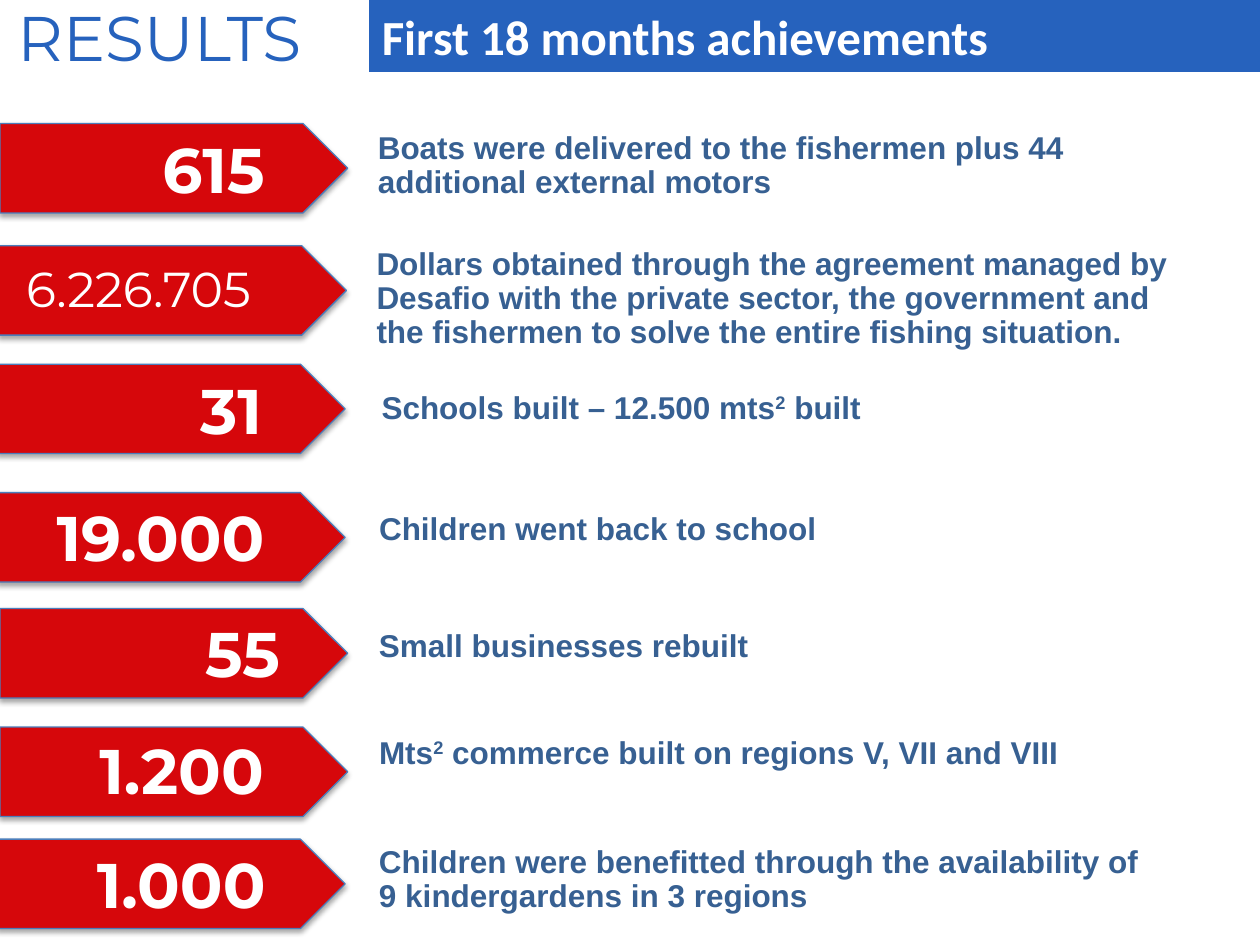
from dataclasses import dataclass

from lxml import etree
from pptx import Presentation
from pptx.dml.color import RGBColor
from pptx.enum.shapes import MSO_SHAPE
from pptx.enum.text import MSO_ANCHOR, MSO_AUTO_SIZE, PP_ALIGN
from pptx.oxml.ns import qn
from pptx.util import Inches, Pt

PENTAGON = MSO_SHAPE.PENTAGON
LEFT, TOP = PP_ALIGN.LEFT, MSO_ANCHOR.TOP
NO_AUTOFIT = MSO_AUTO_SIZE.NONE
TITLE_ONLY = 5

BLUE, NAVY, RED, OUTLINE, WHITE = "2662BD", "376092", "D6070B", "4B7EBC", "FFFFFF"
SLIDE_WIDTH, SLIDE_HEIGHT = 10, 7.5
BAR_LEFT, BAR_HEIGHT = 2.93, 0.57
ARROW_WIDTH, ARROW_HEIGHT = 2.76, 0.71
SUPERSCRIPT = "²"


@dataclass
class Result:
    """One achievement: its arrow, its figure and its description."""
    figure: str
    arrow: tuple
    figure_box: tuple
    description: str
    description_box: tuple
    spacing: float = 0.9
    size: int = 36
    bold: bool = True


RESULTS = [
    Result("615", (0, 0.98), (1.19, 0.99, 1.21),
           "Boats were delivered to the fishermen plus 44 additional external motors",
           (2.9, 1, 6.19, 0.65)),
    Result("6.226.705", (-0.01, 1.95), (0.11, 2, 2.3),
           "Dollars obtained through the agreement managed by Desafio with the private "
           "sector, the government and the fishermen to solve the entire fishing situation.",
           (2.89, 1.92, 6.67, 0.92), size=28, bold=False),
    Result("31", (-0.02, 2.89), (1.49, 2.9, 0.88),
           "Schools built – 12.500 mts² built", (2.93, 3.03, 4.1, 0.4), spacing=1.0),
    Result("19.000", (-0.02, 3.91), (0.35, 3.91, 2.05),
           "Children went back to school", (2.91, 3.99, 3.71, 0.4), spacing=1.0),
    Result("55", (0, 4.83), (1.53, 4.83, 0.88),
           "Small businesses rebuilt", (2.91, 4.92, 3.16, 0.4), spacing=1.0),
    Result("1.200", (0, 5.77), (0.69, 5.76, 1.72),
           "Mts² commerce built on regions V, VII and VIII", (2.91, 5.8, 6.18, 0.38)),
    Result("1.000", (-0.02, 6.66), (0.67, 6.66, 1.72),
           "Children were benefitted through the availability of 9 kindergardens in 3 regions",
           (2.91, 6.67, 6.4, 0.65)),
]


def color(value):
    """Turn a hex string into a colour."""
    return RGBColor.from_string(value)


def write_text(shape, text, font, size, hex_color, bold=False, spacing=1.0):
    """Write one left-aligned paragraph, raising each superscript two."""
    frame = shape.text_frame
    frame.word_wrap = True
    frame.auto_size = NO_AUTOFIT
    frame.vertical_anchor = TOP
    paragraph = frame.paragraphs[0]
    paragraph.alignment = LEFT
    paragraph.line_spacing = spacing
    paragraph.font.name = font
    paragraph.font.size = Pt(size)
    paragraph.font.bold = bold
    paragraph.font.color.rgb = color(hex_color)
    for index, part in enumerate(text.split(SUPERSCRIPT)):
        if index:
            raised = paragraph.add_run()
            raised.text = "2"
            raised._r.get_or_add_rPr().set("baseline", "30000")
        paragraph.add_run().text = part


def add_text(shapes, box, text, *style, **options):
    """Add a text box at the given left, top, width and height."""
    write_text(shapes.add_textbox(*map(Inches, box)), text, *style, **options)


def add_shadow(shape):
    """Give a shape a soft shadow straight below it."""
    shape.shadow.inherit = False
    effects = shape._element.spPr.find(qn("a:effectLst"))
    shadow = etree.SubElement(effects, qn("a:outerShdw"), blurRad=str(Pt(3.1)),
                              dist=str(Pt(1.8)), dir="5400000", rotWithShape="0")
    tint = etree.SubElement(shadow, qn("a:srgbClr"), val="000000")
    etree.SubElement(tint, qn("a:alpha"), val="35000")


def add_arrow(shapes, left, top):
    """Add a red arrow pointing at a description."""
    arrow = shapes.add_shape(PENTAGON, Inches(left), Inches(top),
                             Inches(ARROW_WIDTH), Inches(ARROW_HEIGHT))
    arrow.fill.solid()
    arrow.fill.fore_color.rgb = color(RED)
    arrow.line.color.rgb = color(OUTLINE)
    arrow.line.width = Pt(0.75)
    add_shadow(arrow)


def add_result(slide, result):
    """Add a description and the group of its arrow and figure."""
    add_text(slide.shapes, result.description_box, result.description, "Arial", 18, NAVY,
             bold=True, spacing=result.spacing)
    group = slide.shapes.add_group_shape()
    add_arrow(group.shapes, *result.arrow)
    height = ARROW_HEIGHT if result.bold else BAR_HEIGHT
    add_text(group.shapes, (*result.figure_box, height), result.figure,
             "Montserrat", result.size, WHITE, bold=result.bold)


def format_title(slide):
    """Turn the title placeholder into the blue bar at the top."""
    title = slide.shapes.title
    title.left, title.top = Inches(BAR_LEFT), 0
    title.width, title.height = Inches(SLIDE_WIDTH - BAR_LEFT), Inches(BAR_HEIGHT)
    title.fill.solid()
    title.fill.fore_color.rgb = color(BLUE)
    write_text(title, "First 18 months achievements", "Calibri", 28, WHITE, bold=True)


def main():
    """Build the results slide."""
    presentation = Presentation()
    presentation.slide_width = Inches(SLIDE_WIDTH)
    presentation.slide_height = Inches(SLIDE_HEIGHT)
    slide = presentation.slides.add_slide(presentation.slide_layouts[TITLE_ONLY])
    format_title(slide)
    for result in RESULTS:
        add_result(slide, result)
    add_text(slide.shapes, (0.04, -0.06, 2.78, 0.71), "RESULTS", "Montserrat", 36, BLUE)
    presentation.save("out.pptx")


if __name__ == "__main__":
    main()
